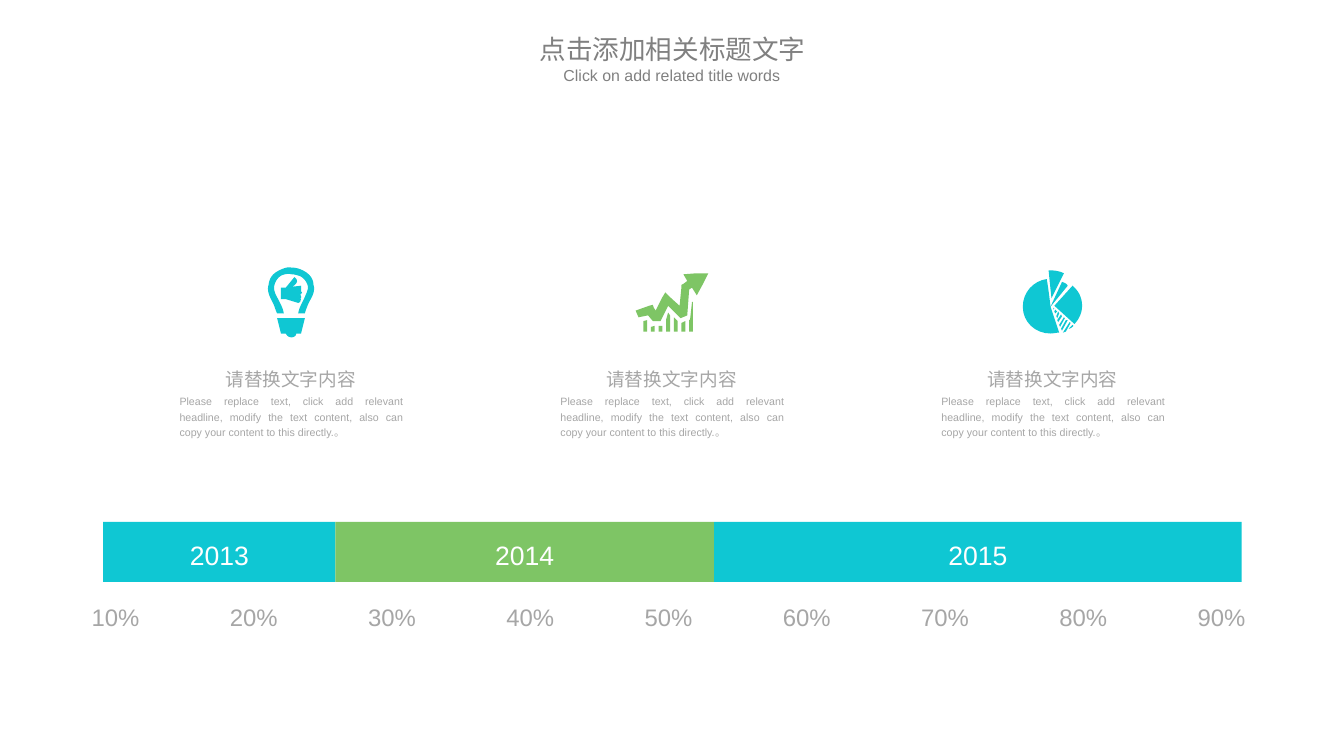
from dataclasses import dataclass
from itertools import accumulate

from lxml import etree
from pptx import Presentation
from pptx import util as u
from pptx.dml import color
from pptx.enum import shapes, text
from pptx.oxml import ns

TEAL, GREEN, WHITE = "0FC7D3", "7EC565", "FFFFFF"
GREY, DARK_GREY = "A6A6A6", "808080"
LATIN, CHINESE = "Arial", "Noto Sans CJK SC"
JUSTIFY, CENTER = text.PP_ALIGN.JUSTIFY, text.PP_ALIGN.CENTER
CURVE_STEPS = 8

# A contour is in hundredths of an inch: pairs are corners, and sixes are
# Bezier curves (two control points, then the end point).
Contour = list[tuple[int, ...]]


@dataclass
class Style:
    size: int
    hue: str
    align: text.PP_ALIGN = JUSTIFY
    font: str = LATIN
    spacing: float = 1.2


@dataclass
class Label:
    words: str
    left: float
    top: float
    width: float
    height: float
    style: Style
    wrap: bool = True
    grow: bool = True


@dataclass
class Period:
    year: str
    width: float
    hue: str


@dataclass
class Icon:
    hue: str
    contours: list[Contour]


PIE = Icon(TEAL, [
    [(1122, 299), (1128, 304, 1132, 311, 1132, 320), (1132, 327, 1129, 334, 1124, 339), (1103, 320)],
    [(1123, 341), (1122, 342, 1120, 344, 1118, 344), (1122, 340)],
    [(1115, 347), (1120, 338), (1119, 337), (1112, 348)],
    [(1111, 346), (1117, 335), (1115, 335), (1110, 344)],
    [(1109, 342), (1114, 333), (1113, 332), (1108, 340)],
    [(1107, 337), (1111, 331), (1110, 329), (1106, 335)],
    [(1106, 333), (1108, 328), (1107, 326), (1105, 331)],
    [(1104, 328), (1106, 326), (1104, 324), (1103, 326)],
    [(1102, 324), (1102, 322), (1103, 323)],
    [(1111, 295), (1099, 321), (1099, 321, 1097, 303, 1095, 292), (1081, 294, 1070, 306, 1070, 321),
     (1070, 337, 1083, 349, 1099, 349), (1102, 349, 1106, 348, 1108, 348), (1099, 321),
     (1117, 299), (1116, 297, 1114, 296, 1111, 295)],
    [(1100, 283), (1099, 283, 1098, 283, 1097, 283), (1098, 294, 1100, 312, 1100, 312),
     (1113, 286), (1109, 284, 1104, 283, 1100, 283)],
])

GROWTH = Icon(GREEN, [
    [(721, 347), (725, 347), (725, 316), (724, 316), (722, 334), (721, 335)],
    [(741, 286), (735, 298), (729, 309), (724, 301), (721, 303), (719, 330), (712, 333),
     (699, 320), (691, 336), (683, 336), (678, 330), (668, 332), (665, 325), (679, 320),
     (683, 319), (684, 322), (686, 325), (693, 311), (696, 306), (700, 310), (711, 320),
     (713, 300), (713, 298), (715, 297), (719, 294), (715, 287), (728, 286)],
    [(681, 347), (685, 347), (685, 341), (681, 342)],
    [(673, 347), (677, 347), (677, 335), (673, 336)],
    [(689, 347), (693, 347), (693, 341), (689, 341)],
    [(697, 347), (701, 347), (701, 330), (699, 327), (697, 334)],
    [(705, 347), (709, 347), (709, 336), (705, 332)],
    [(713, 347), (717, 347), (717, 336), (713, 338)],
])

BULB = Icon(TEAL, [
    [(290, 333), (319, 333), (315, 349), (310, 349), (310, 351, 308, 353, 305, 353),
     (302, 353, 300, 351, 299, 349), (294, 349)],
    [(315, 299), (315, 305), (316, 306), (315, 308), (314, 308), (315, 310), (315, 312),
     (314, 313), (315, 313), (314, 316), (312, 317), (299, 313), (294, 313), (294, 301),
     (299, 301), (308, 290), (314, 294, 309, 298, 306, 300)],
    [(290, 328), (297, 328), (296, 322, 293, 317, 291, 313), (288, 308, 286, 303, 287, 299),
     (288, 294, 291, 290, 295, 288), (298, 287, 301, 286, 305, 287), (308, 287, 311, 288, 314, 289),
     (318, 291, 321, 295, 322, 299), (323, 303, 320, 308, 318, 313), (316, 317, 313, 322, 312, 328),
     (319, 328), (320, 324, 322, 319, 324, 315), (327, 310, 330, 304, 328, 298),
     (328, 291, 323, 286, 317, 283), (313, 281, 309, 280, 305, 280), (301, 279, 296, 281, 292, 283),
     (286, 286, 282, 290, 281, 298), (279, 304, 282, 310, 285, 316), (287, 319, 288, 324, 290, 328)],
])

PERIODS = [Period("2013", 2.43, TEAL), Period("2014", 3.96, GREEN), Period("2015", 5.52, TEAL)]
BAR_LEFT, BAR_TOP, BAR_HEIGHT = 1.08, 5.46, 0.63
FIRST_PERCENT, LAST_PERCENT = 0.86, 12.43
FIRST_COLUMN, LAST_COLUMN = 1.78, 9.75
HEADING = "请替换文字内容"
BODY = ("Please replace text, click add relevant headline, modify the text content, "
        "also can copy your content to this directly.。")


def rgb(value: str) -> color.RGBColor:
    return color.RGBColor.from_string(value)


def spread(first: float, last: float, count: int) -> list[float]:
    """Return evenly spaced positions, both ends included."""
    return [first + i * (last - first) / (count - 1) for i in range(count)]


def write(frame, words: str, style: Style) -> None:
    para = frame.paragraphs[0]
    para.alignment = style.align
    para.line_spacing = style.spacing
    span = para.add_run()
    span.text = words
    span.font.size = u.Pt(style.size)
    span.font.name = style.font
    span.font.color.rgb = rgb(style.hue)
    east_asian = etree.SubElement(span.font._element, ns.qn("a:ea"))
    east_asian.set("typeface", style.font)


def add_label(page, label: Label) -> None:
    box = page.shapes.add_textbox(*map(u.Inches, (label.left, label.top, label.width, label.height)))
    frame = box.text_frame
    frame.word_wrap = label.wrap
    frame.auto_size = text.MSO_AUTO_SIZE.SHAPE_TO_FIT_TEXT if label.grow else text.MSO_AUTO_SIZE.NONE
    write(frame, label.words, label.style)


def paint(shape, hue: str) -> None:
    shape.fill.solid()
    shape.fill.fore_color.rgb = rgb(hue)
    shape.line.fill.background()
    shape.shadow.inherit = False


def add_period(page, period: Period, left: float) -> None:
    bar = page.shapes.add_shape(shapes.MSO_SHAPE.RECTANGLE,
                                *map(u.Inches, (left, BAR_TOP, period.width, BAR_HEIGHT)))
    paint(bar, period.hue)
    bar.text_frame.vertical_anchor = text.MSO_ANCHOR.MIDDLE
    write(bar.text_frame, period.year, Style(20, WHITE, CENTER))


def flatten(contour: Contour) -> list[tuple[float, float]]:
    """Turn a contour into EMU points, sampling its curves."""
    points = [contour[0]]
    for step in contour[1:]:
        if len(step) == 2:
            points.append(step)
            continue
        controls = (points[-1], step[:2], step[2:4], step[4:])
        for i in range(1, CURVE_STEPS + 1):
            t = i / CURVE_STEPS
            weights = ((1 - t) ** 3, 3 * t * (1 - t) ** 2, 3 * t * t * (1 - t), t ** 3)
            points.append(tuple(sum(w * c[axis] for w, c in zip(weights, controls)) for axis in (0, 1)))
    return [(u.Inches(x / 100), u.Inches(y / 100)) for x, y in points]


def add_icon(page, icon: Icon) -> None:
    outlines = [flatten(contour) for contour in icon.contours]
    builder = page.shapes.build_freeform(*outlines[0][0])
    for number, outline in enumerate(outlines):
        if number:
            builder.move_to(*outline[0])
        builder.add_line_segments(outline[1:], close=True)
    paint(builder.convert_to_shape(), icon.hue)


def main() -> None:
    deck = Presentation()
    deck.slide_width, deck.slide_height = u.Inches(14.06), u.Inches(7.91)
    page = deck.slides.add_slide(deck.slide_layouts[6])

    for number, left in enumerate(spread(FIRST_PERCENT, LAST_PERCENT, 9), 1):
        add_label(page, Label(f"{number * 10}%", left, 6.2, 0.71, 0.43, Style(18, GREY), wrap=False))
    lefts = accumulate((period.width for period in PERIODS), initial=BAR_LEFT)
    for period, left in zip(PERIODS, lefts):
        add_period(page, period, left)
    for icon, left in zip((BULB, GROWTH, PIE), spread(FIRST_COLUMN, LAST_COLUMN, 3)):
        add_icon(page, icon)
        add_label(page, Label(HEADING, left + 0.48, 3.75, 1.58, 0.36, Style(14, GREY), wrap=False))
        add_label(page, Label(BODY, left, 4.06, 2.54, 0.59, Style(8, GREY)))
    add_label(page, Label("点击添加相关标题文字", 5.36, 0.29, 3.35, 0.41,
                          Style(20, DARK_GREY, CENTER, CHINESE, 1.0), grow=False))
    add_label(page, Label("Click on add related title words", 5.76, 0.64, 2.54, 0.41,
                          Style(12, DARK_GREY, CENTER, spacing=1.0), grow=False))
    deck.save("out.pptx")


if __name__ == "__main__":
    main()
